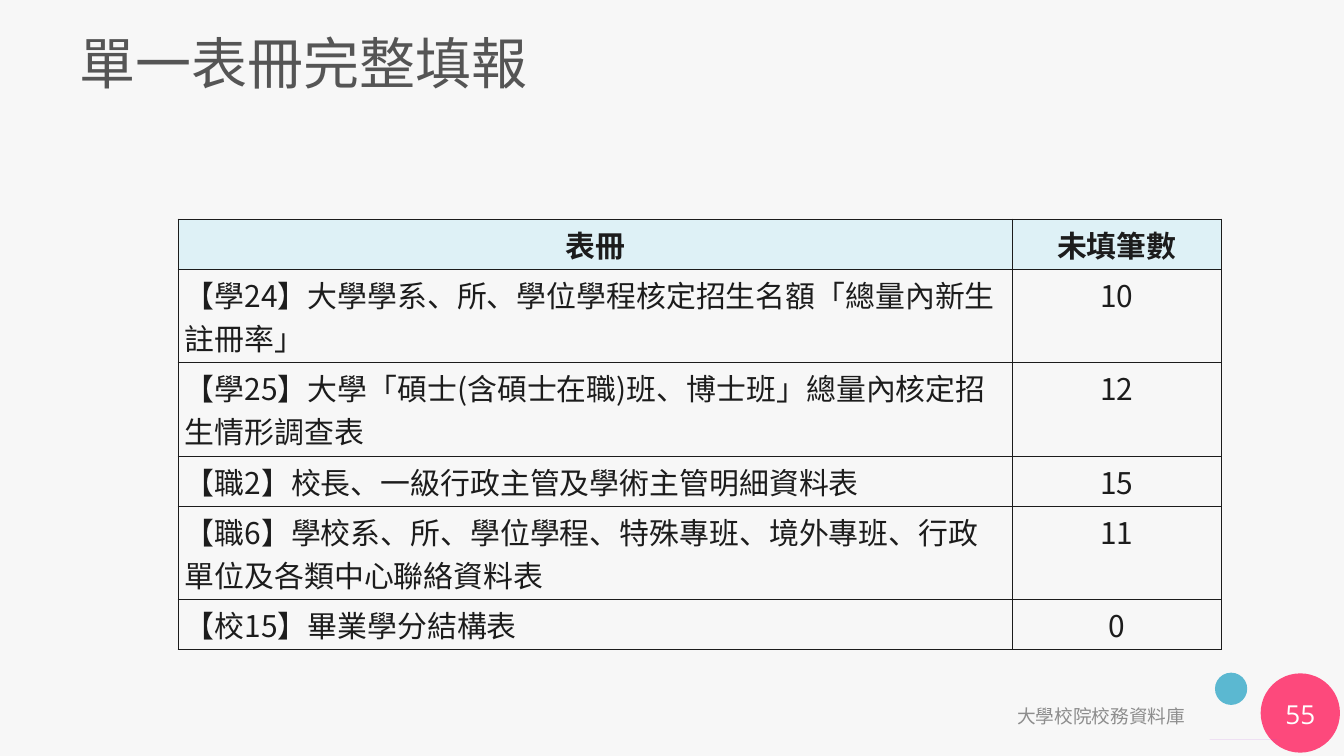
"""Build the slide listing unfilled records for each report form."""
from math import asin, cos, pi, sin

from lxml import etree
from pptx import Presentation
from pptx.dml.color import RGBColor
from pptx.enum import shapes, text
from pptx.oxml import ns
from pptx.util import Inches, Pt

PAPER = RGBColor(0xF7, 0xF7, 0xF7)
TITLE_GREY = RGBColor(0x55, 0x55, 0x55)
FOOTER_GREY = RGBColor(0x8D, 0x8D, 0x8D)
INK = RGBColor(0x1C, 0x1C, 0x1C)
HEADER_BLUE = RGBColor(0xDE, 0xF1, 0xF6)
TEAL = RGBColor(0x5B, 0xB8, 0xD1)
PINK = RGBColor(0xFD, 0x49, 0x7C)
PURPLE = RGBColor(0xB1, 0x43, 0xDD)
WHITE = RGBColor(0xFF, 0xFF, 0xFF)

WIDTH, HEIGHT = 20, 11.25
COLUMN_WIDTHS = (12.42, 3.1)
ROW_HEIGHTS = (0.63, 1.17, 1.17, 0.63, 1.17, 0.63)
ROWS = (
    ("表冊", "未填筆數"),
    ("【學24】大學學系、所、學位學程核定招生名額「總量內新生註冊率」", "10"),
    ("【學25】大學「碩士(含碩士在職)班、博士班」總量內核定招生情形調查表", "12"),
    ("【職2】校長、一級行政主管及學術主管明細資料表", "15"),
    ("【職6】學校系、所、學位學程、特殊專班、境外專班、行政單位及各類中心聯絡資料表", "11"),
    ("【校15】畢業學分結構表", "0"),
)


def write(tf, words, size, font, color, align=text.PP_ALIGN.LEFT, bold=False):
    tf.text = words
    p = tf.paragraphs[0]
    p.alignment = align
    p.font.size = Pt(size)
    p.font.name = font
    p.font.bold = bold
    p.font.color.rgb = color


def set_frame(tf):
    tf.word_wrap = True
    tf.auto_size = text.MSO_AUTO_SIZE.NONE
    tf.vertical_anchor = text.MSO_ANCHOR.MIDDLE
    tf.margin_left = tf.margin_right = Inches(0.18)
    tf.margin_top = tf.margin_bottom = Inches(0.09)


def paint(sp, color):
    sp.shadow.inherit = False
    sp.fill.solid()
    sp.fill.fore_color.rgb = color
    sp.line.fill.background()


def add_circle(s, x, y, size, color):
    sp = s.shapes.add_shape(
        shapes.MSO_SHAPE.OVAL, Inches(x), Inches(y), Inches(size), Inches(size))
    paint(sp, color)


def add_cut_circle(s, cx, cy, radius, color, steps=90):
    """Add a circle cut off flat by the bottom edge of the slide."""
    cut = asin((HEIGHT - cy) / radius)
    start, sweep = pi - cut, pi + 2 * cut
    angles = [start + sweep * i / steps for i in range(steps + 1)]
    points = [(cx + radius * cos(a), cy + radius * sin(a)) for a in angles]
    builder = s.shapes.build_freeform(*points[0], scale=Inches(1))
    builder.add_line_segments(points[1:], close=True)
    paint(builder.convert_to_shape(), color)


def add_label(s, box, words, size, font, color, align):
    sp = s.shapes.add_textbox(*map(Inches, box))
    set_frame(sp.text_frame)
    write(sp.text_frame, words, size, font, color, align)


def add_title(s, words):
    sp = s.shapes.title
    sp.left, sp.top, sp.width, sp.height = map(Inches, (1, 0.27, 18.05, 1.32))
    set_frame(sp.text_frame)
    write(sp.text_frame, words, 60, "Arial", TITLE_GREY)


def add_borders(cell):
    """Draw a one-point line on each side, ahead of the cell's fill."""
    props = cell._tc.get_or_add_tcPr()
    for i, side in enumerate(("lnL", "lnR", "lnT", "lnB")):
        line = etree.Element(ns.qn(f"a:{side}"), w=str(Pt(1)))
        fill = etree.SubElement(line, ns.qn("a:solidFill"))
        etree.SubElement(fill, ns.qn("a:srgbClr"), val=str(INK))
        props.insert(i, line)


def add_form_table(s):
    frame = s.shapes.add_table(
        len(ROWS), len(COLUMN_WIDTHS), Inches(2.65), Inches(3.26),
        Inches(sum(COLUMN_WIDTHS)), Inches(sum(ROW_HEIGHTS)))
    table = frame.table
    table.first_row = table.horz_banding = False
    for column, width in zip(table.columns, COLUMN_WIDTHS):
        column.width = Inches(width)
    for r, (row, height) in enumerate(zip(table.rows, ROW_HEIGHTS)):
        row.height = Inches(height)
        for c, cell in enumerate(row.cells):
            header = r == 0
            centred = header or c == 1
            align = text.PP_ALIGN.CENTER if centred else text.PP_ALIGN.LEFT
            write(cell.text_frame, ROWS[r][c], 32, "Noto Sans CJK SC", INK,
                  align, header)
            if header:
                cell.fill.solid()
                cell.fill.fore_color.rgb = HEADER_BLUE
            else:
                cell.fill.background()
            add_borders(cell)


def main():
    prs = Presentation()
    prs.slide_width, prs.slide_height = Inches(WIDTH), Inches(HEIGHT)
    s = prs.slides.add_slide(prs.slide_layouts[5])
    s.background.fill.solid()
    s.background.fill.fore_color.rgb = PAPER

    add_circle(s, 18.08, 10.01, 0.48, TEAL)
    add_circle(s, 18.76, 10.02, 1.18, PINK)
    add_cut_circle(s, 18.21, 11.01, 0.4, PURPLE)
    add_title(s, "單一表冊完整填報")
    add_label(s, (11.49, 10.35, 6.33, 0.6), "大學校院校務資料庫",
              20, "Arial", FOOTER_GREY, text.PP_ALIGN.RIGHT)
    add_label(s, (18.76, 10.32, 1.18, 0.6), "55",
              28, "Open Sans", WHITE, text.PP_ALIGN.CENTER)
    add_form_table(s)
    prs.save("out.pptx")


if __name__ == "__main__":
    main()
